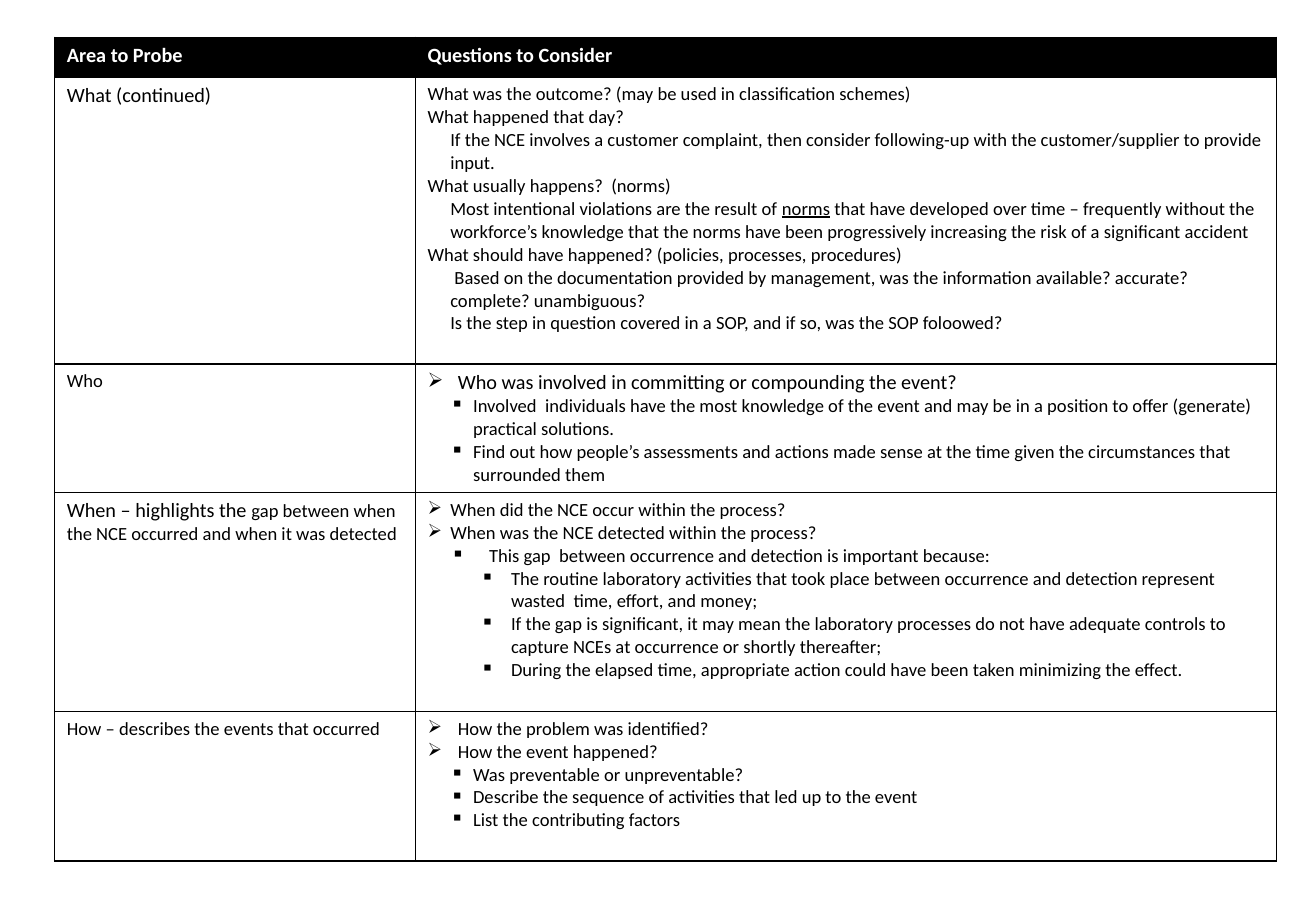
from dataclasses import dataclass

from lxml.etree import SubElement
from pptx import Presentation
from pptx.dml.color import RGBColor
from pptx.oxml import parse_xml
from pptx.oxml.ns import nsdecls, qn
from pptx.table import Table, _Cell
from pptx.text.text import _Paragraph
from pptx.util import Pt

BLACK = RGBColor(0x00, 0x00, 0x00)
WHITE = RGBColor(0xFF, 0xFF, 0xFF)
FONT = "Calibri"
COLUMN_WIDTHS = (213.8, 510.5)
TABLE_LEFT, TABLE_TOP = 32.4, 21.9
THIN, REGULAR = 0.5, 1


@dataclass(frozen=True)
class Layout:
    level: int = 0
    left: float = 0
    hanging: float = 0
    bullet: str = ""


@dataclass(frozen=True)
class Span:
    text: str
    size: float = 11
    underline: bool = False


@dataclass(frozen=True)
class Line:
    spans: tuple[Span, ...]
    layout: Layout = Layout()


@dataclass(frozen=True)
class Row:
    height: float
    area: Line
    questions: tuple[Line, ...]
    header: bool = False


DETAIL = Layout(1, 13.5)
DEEP_DETAIL = Layout(2, 13.5)
WHO_ARROW = Layout(0, 18, 18, "➢")
WHO_SQUARE = Layout(1, 27, 13.5, "▪")
WHEN_ARROW = Layout(1, 13.5, 13.5, "➢")
WHEN_SQUARE = Layout(2, 36.5, 22.5, "▪")
WHEN_REASON = Layout(3, 49.5, 18, "▪")
HOW_ARROW = Layout(4, 18, 18, "➢")
HOW_SQUARE = Layout(6, 27, 13.5, "▪")


def line(text: str, layout: Layout = Layout(), size: float = 11) -> Line:
    return Line((Span(text, size),), layout)


ROWS = (
    Row(23.7, line("Area to Probe", size=12),
        (line("Questions to Consider", size=12),), header=True),
    Row(170.1, line("What (continued)", size=12), (
        line("What was the outcome? (may be used in classification schemes)"),
        line("What happened that day?"),
        line("If the NCE involves a customer complaint, then consider following-up "
             "with the customer/supplier to provide input.", DETAIL),
        line("What usually happens?  (norms)"),
        Line((
            Span("Most intentional violations are the result of "),
            Span("norms", underline=True),
            Span(" that have developed over time – frequently without the workforce’s "
                 "knowledge that the norms have been progressively increasing the risk "
                 "of a significant accident"),
        ), DEEP_DETAIL),
        line("What should have happened? (policies, processes, procedures)"),
        line(" Based on the documentation provided by management, was the information "
             "available? accurate? complete? unambiguous?", DEEP_DETAIL),
        line("Is the step in question covered in a SOP, and if so, was the SOP foloowed?",
             DEEP_DETAIL),
    )),
    Row(75.9, line("Who"), (
        line("Who was involved in committing or compounding the event?", WHO_ARROW, 12),
        line("Involved  individuals have the most knowledge of the event and may be in a "
             "position to offer (generate) practical solutions.", WHO_SQUARE),
        line("Find out how people’s assessments and actions made sense at the time given "
             "the circumstances that surrounded them", WHO_SQUARE),
    )),
    Row(129.8, Line((
        Span("When – highlights the ", 12),
        Span("gap between when the NCE occurred and when it was detected"),
    )), (
        line("When did the NCE occur within the process?", WHEN_ARROW),
        line("When was the NCE detected within the process?", WHEN_ARROW),
        line("This gap  between occurrence and detection is important because:",
             WHEN_SQUARE),
        line("The routine laboratory activities that took place between occurrence and "
             "detection represent wasted  time, effort, and money;", WHEN_REASON),
        line("If the gap is significant, it may mean the laboratory processes do not have "
             "adequate controls to capture NCEs at occurrence or shortly thereafter;",
             WHEN_REASON),
        line("During the elapsed time, appropriate action could have been taken "
             "minimizing the effect.", WHEN_REASON),
    )),
    Row(88.8, line("How – describes the events that occurred", Layout(3)), (
        line("How the problem was identified?", HOW_ARROW),
        line("How the event happened?", HOW_ARROW),
        line("Was preventable or unpreventable?", HOW_SQUARE),
        line("Describe the sequence of activities that led up to the event", HOW_SQUARE),
        line("List the contributing factors", HOW_SQUARE),
    )),
)


def apply_layout(para: _Paragraph, layout: Layout) -> None:
    para.level = layout.level
    properties = para._p.get_or_add_pPr()
    properties.set("marL", str(Pt(layout.left)))
    properties.set("indent", str(-Pt(layout.hanging)))
    if layout.bullet:
        SubElement(properties, qn("a:buChar"), char=layout.bullet)
    else:
        SubElement(properties, qn("a:buNone"))


def write_lines(cell: _Cell, lines: tuple[Line, ...], header: bool) -> None:
    frame = cell.text_frame
    for index, content in enumerate(lines):
        para = frame.add_paragraph() if index else frame.paragraphs[0]
        apply_layout(para, content.layout)
        for span in content.spans:
            run = para.add_run()
            run.text = span.text
            run.font.name = FONT
            run.font.size = Pt(span.size)
            run.font.bold = header
            run.font.color.rgb = WHITE if header else BLACK
            if span.underline:
                run.font.underline = True


def style_cell(cell: _Cell, header: bool) -> None:
    if header:
        cell.fill.solid()
        cell.fill.fore_color.rgb = BLACK
    else:
        cell.fill.background()
    properties = cell._tc.get_or_add_tcPr()
    for index, side in enumerate("LRTB"):
        width = Pt(THIN if header and side != "B" else REGULAR)
        properties.insert(index, parse_xml(
            f'<a:ln{side} {nsdecls("a")} w="{width}"><a:solidFill>'
            f'<a:srgbClr val="{BLACK}"/></a:solidFill></a:ln{side}>'))


def fill_table(table: Table) -> None:
    table.horz_banding = False
    table.first_row = True
    for column, width in zip(table.columns, COLUMN_WIDTHS):
        column.width = Pt(width)
    for index, row in enumerate(ROWS):
        table.rows[index].height = Pt(row.height)
        for column, lines in enumerate(((row.area,), row.questions)):
            cell = table.cell(index, column)
            write_lines(cell, lines, row.header)
            style_cell(cell, row.header)


def main() -> None:
    deck = Presentation()
    deck.slide_width, deck.slide_height = Pt(780), Pt(540)
    page = deck.slides.add_slide(deck.slide_layouts[6])
    frame = page.shapes.add_table(
        len(ROWS), len(COLUMN_WIDTHS), Pt(TABLE_LEFT), Pt(TABLE_TOP),
        Pt(sum(COLUMN_WIDTHS)), Pt(sum(row.height for row in ROWS)))
    fill_table(frame.table)
    deck.save("out.pptx")


if __name__ == "__main__":
    main()
